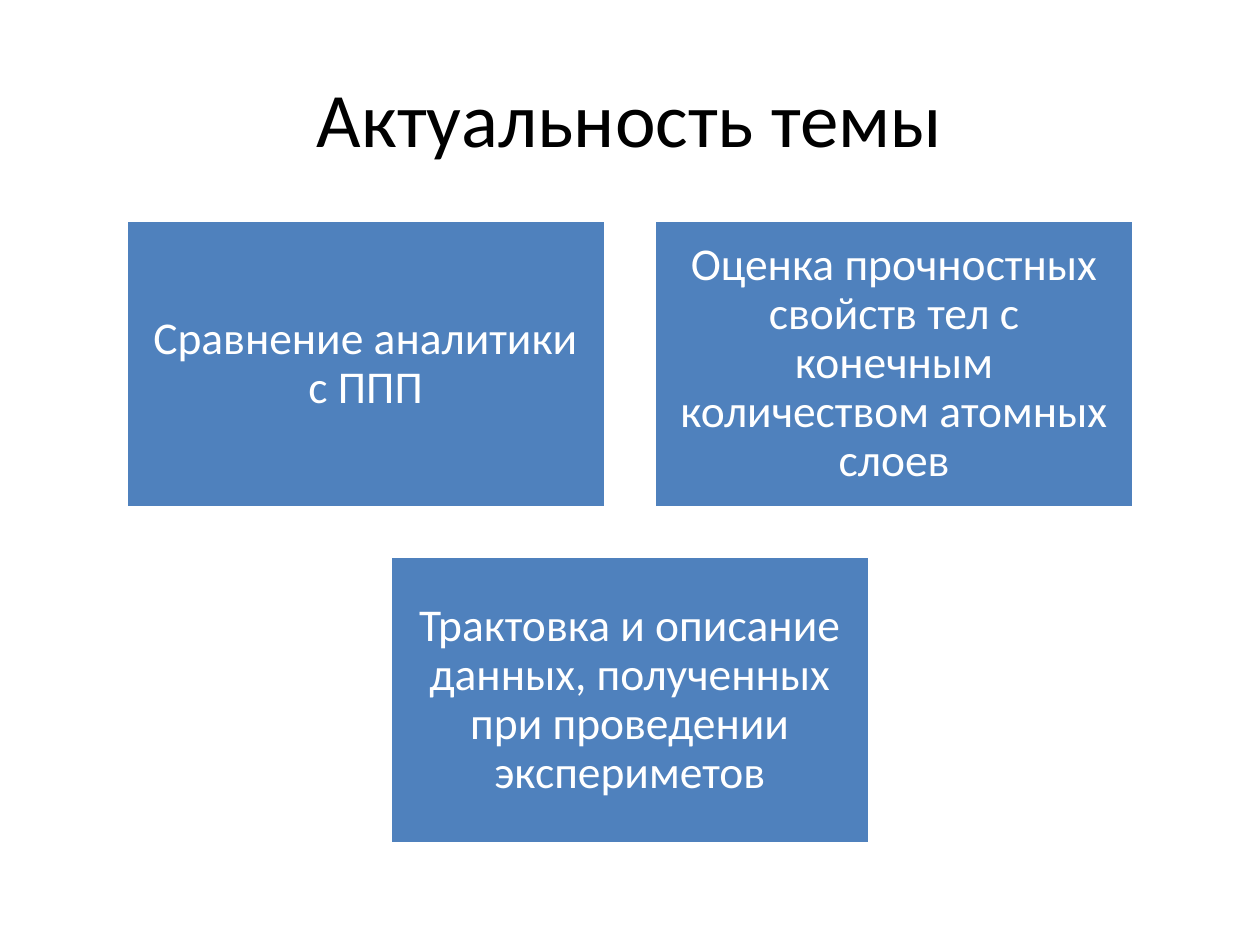
from pptx import Presentation
from pptx.dml.color import RGBColor
from pptx.enum.shapes import MSO_SHAPE
from pptx.enum.text import MSO_ANCHOR, PP_ALIGN
from pptx.util import Pt

TITLE = "Актуальность темы"
ROWS = [
    ["Сравнение аналитики с ППП",
     "Оценка прочностных свойств тел с конечным количеством атомных слоев"],
    ["Трактовка и описание данных, полученных при проведении экспериметов"],
]
PAGE_WIDTH, PAGE_HEIGHT = 720, 540
BOX_WIDTH, BOX_HEIGHT, GAP = 274, 164, 28
ROWS_TOP = 126
INSET = 8


def color(value):
    return RGBColor.from_string(value)


def write(shape, text, size, text_color):
    frame = shape.text_frame
    frame.word_wrap = True
    frame.vertical_anchor = MSO_ANCHOR.MIDDLE
    para = frame.paragraphs[0]
    para.text = text
    para.alignment = PP_ALIGN.CENTER
    para.font.name = "Calibri"
    para.font.size = Pt(size)
    para.font.color.rgb = color(text_color)
    return frame, para


def add_box(page, left, top, text):
    box = page.shapes.add_shape(
        MSO_SHAPE.RECTANGLE, Pt(left), Pt(top), Pt(BOX_WIDTH), Pt(BOX_HEIGHT))
    box.shadow.inherit = False
    box.fill.solid()
    box.fill.fore_color.rgb = color("4F81BD")
    box.line.color.rgb = color("FFFFFF")
    box.line.width = Pt(2)
    frame, para = write(box, text, 26, "FFFFFF")
    frame.margin_left = frame.margin_right = Pt(INSET)
    frame.margin_top = frame.margin_bottom = Pt(INSET)
    para.line_spacing = 0.9


def main():
    deck = Presentation()
    deck.slide_width, deck.slide_height = Pt(PAGE_WIDTH), Pt(PAGE_HEIGHT)
    page = deck.slides.add_slide(deck.slide_layouts[6])

    title = page.shapes.add_textbox(Pt(36), Pt(21.6), Pt(648), Pt(90))
    write(title, TITLE, 44, "000000")

    for row, texts in enumerate(ROWS):
        row_width = len(texts) * (BOX_WIDTH + GAP) - GAP
        row_left = (PAGE_WIDTH - row_width) / 2
        top = ROWS_TOP + row * (BOX_HEIGHT + GAP)
        for column, text in enumerate(texts):
            add_box(page, row_left + column * (BOX_WIDTH + GAP), top, text)

    deck.save("out.pptx")


if __name__ == "__main__":
    main()
